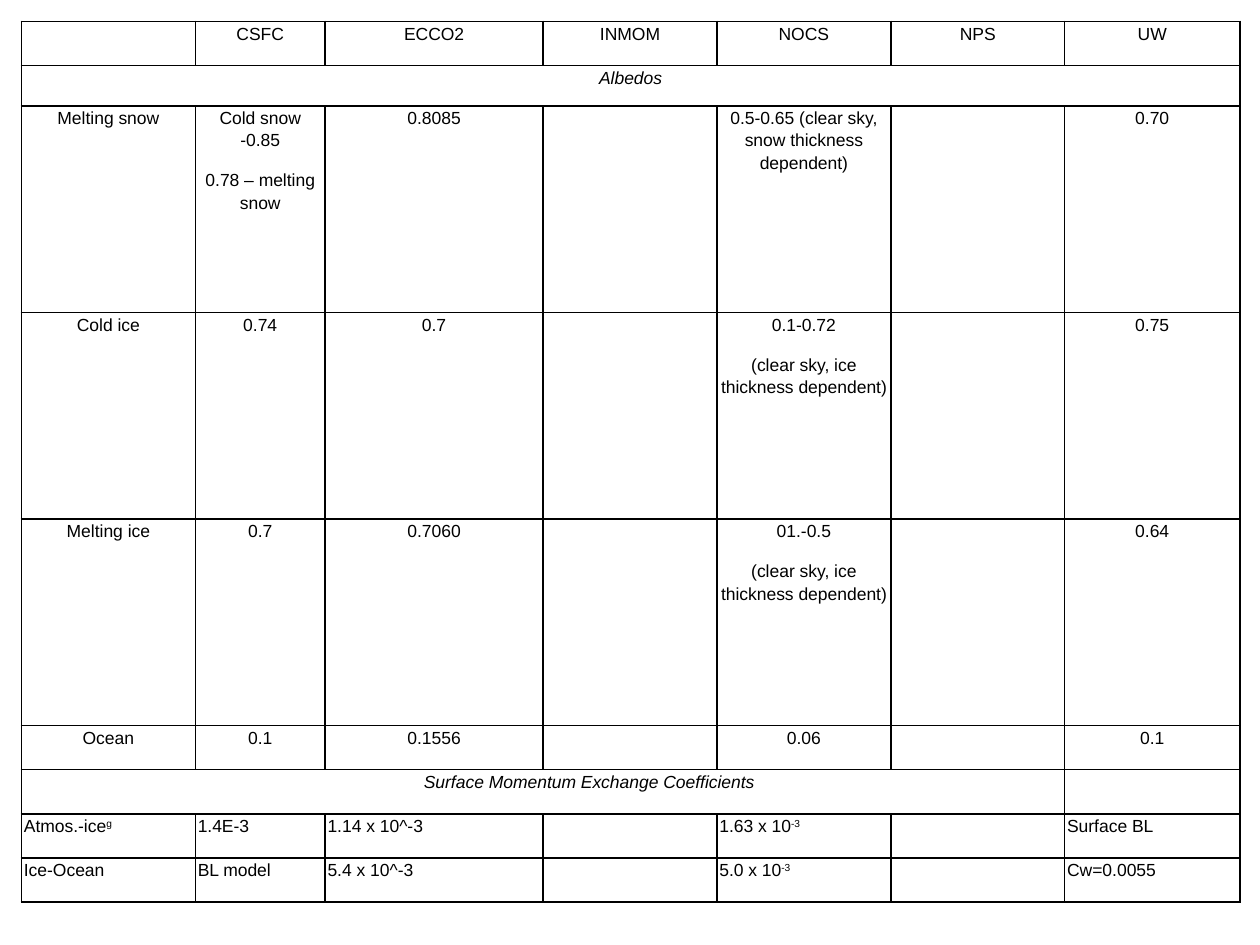
from lxml.etree import SubElement
from pptx import Presentation
from pptx.dml.color import RGBColor
from pptx.enum.text import PP_ALIGN
from pptx.oxml.ns import qn
from pptx.util import Inches, Pt

BLACK = RGBColor(0x00, 0x00, 0x00)

COLUMN_WIDTHS = [1.38, 1.03, 1.73, 1.38, 1.38, 1.38, 1.39]
ROW_HEIGHTS = [0.35, 0.32] + [1.64] * 3 + [0.35] * 4

# A line break starts a paragraph; text after "|" is superscript
ROWS = [
    ["", "CSFC", "ECCO2", "INMOM", "NOCS", "NPS", "UW"],
    ["Albedos"],
    ["Melting snow", "Cold snow -0.85\n0.78 – melting snow", "0.8085", "",
     "0.5-0.65 (clear sky, snow thickness dependent)", "", "0.70"],
    ["Cold ice", "0.74", "0.7", "",
     "0.1-0.72\n(clear sky, ice thickness dependent)", "", "0.75"],
    ["Melting ice", "0.7", "0.7060", "",
     "01.-0.5\n(clear sky, ice thickness dependent)", "", "0.64"],
    ["Ocean", "0.1", "0.1556", "", "0.06", "", "0.1"],
    ["Surface Momentum Exchange Coefficients"],
    ["Atmos.-ice|g", "1.4E-3", "1.14 x 10^-3", "", "1.63 x 10|-3", "", "Surface BL"],
    ["Ice-Ocean", "BL model", "5.4 x 10^-3", "", "5.0 x 10|-3", "", "Cw=0.0055"],
]
ALBEDO_HEADING = 1
MOMENTUM_HEADING = 6


class SlideBuilder:
    """Holds the current slide and its table style."""

    font_name = "Arial"
    font_size = Pt(10)
    border_width = Pt(1)
    side_margin = Inches(0.02)

    def __init__(self, slide):
        self.slide = slide

    def add_table(self, left, top, widths, heights):
        table = self.slide.shapes.add_table(
            len(heights), len(widths), Inches(left), Inches(top),
            Inches(sum(widths)), Inches(sum(heights))).table
        table.first_row = table.horz_banding = False
        for column, width in zip(table.columns, widths):
            column.width = Inches(width)
        for row, height in zip(table.rows, heights):
            row.height = Inches(height)
        for cell in table.iter_cells():
            self.style_cell(cell)
        return table

    def style_cell(self, cell):
        cell.margin_left = cell.margin_right = self.side_margin
        cell.margin_top = cell.margin_bottom = 0
        properties = cell._tc.get_or_add_tcPr()
        for side in ("a:lnL", "a:lnR", "a:lnT", "a:lnB"):
            line = SubElement(properties, qn(side), w=str(self.border_width))
            fill = SubElement(line, qn("a:solidFill"))
            SubElement(fill, qn("a:srgbClr"), val=str(BLACK))
        cell.fill.background()

    def write_cell(self, cell, text, alignment, italic=False):
        cell.text_frame.text = text
        for paragraph in cell.text_frame.paragraphs:
            paragraph.alignment = alignment
            paragraph.line_spacing = 1.15
            paragraph.space_after = Pt(10)
            base, _, superscript = paragraph.text.partition("|")
            paragraph.text = base
            if superscript:
                run = paragraph.add_run()
                run.text = superscript
                run._r.get_or_add_rPr().set("baseline", "30000")
            for run in paragraph.runs:
                run.font.name = self.font_name
                run.font.size = self.font_size
                run.font.italic = italic
                run.font.color.rgb = BLACK


def main():
    presentation = Presentation()
    presentation.slide_width = Inches(10)
    presentation.slide_height = Inches(7.5)
    builder = SlideBuilder(presentation.slides.add_slide(presentation.slide_layouts[6]))
    table = builder.add_table(0.17, 0.17, COLUMN_WIDTHS, ROW_HEIGHTS)

    # Section headings span several columns
    table.cell(ALBEDO_HEADING, 0).merge(table.cell(ALBEDO_HEADING, 6))
    momentum_cell = table.cell(MOMENTUM_HEADING, 0)
    momentum_cell.merge(table.cell(MOMENTUM_HEADING, 5))
    momentum_cell.margin_left = Inches(0.75)

    # Values: centred down to the last heading, left-aligned below it
    for row_index, row in enumerate(ROWS):
        alignment = PP_ALIGN.CENTER if row_index <= MOMENTUM_HEADING else PP_ALIGN.LEFT
        italic = row_index in (ALBEDO_HEADING, MOMENTUM_HEADING)
        for column_index, text in enumerate(row):
            if text:
                builder.write_cell(table.cell(row_index, column_index), text, alignment, italic)

    presentation.save("out.pptx")


if __name__ == "__main__":
    main()
